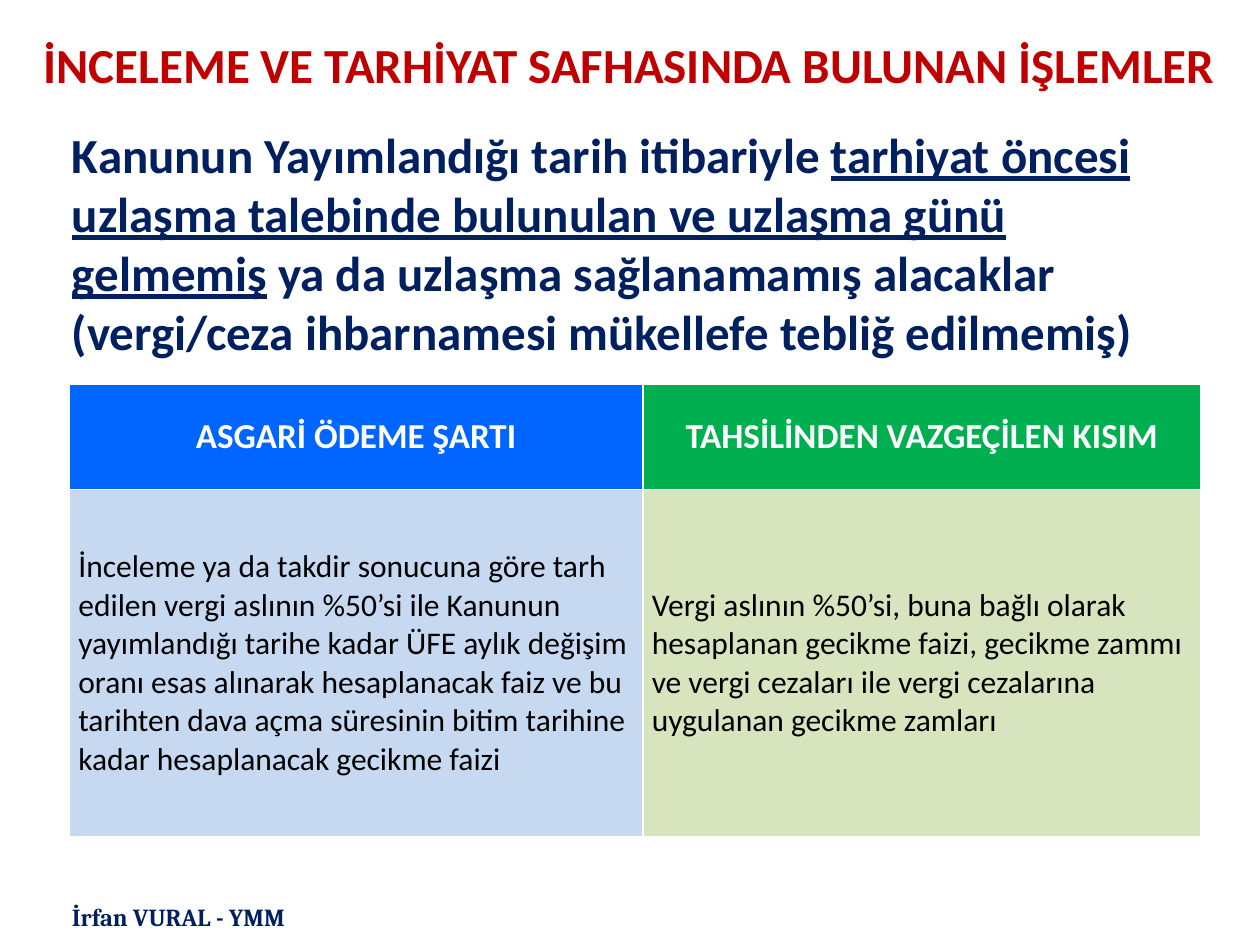
"""Build a slide on tax assessments under review, with a two-column table."""
from lxml import etree
from pptx import Presentation
from pptx.dml.color import RGBColor
from pptx.enum import text as t
from pptx.oxml import ns
from pptx.util import Cm, Pt

NAVY = RGBColor(0x00, 0x20, 0x60)
RED = RGBColor(0xC0, 0x00, 0x00)
WHITE = RGBColor(0xFF, 0xFF, 0xFF)
BLACK = RGBColor(0x00, 0x00, 0x00)
BLUE = RGBColor(0x00, 0x66, 0xFF)
GREEN = RGBColor(0x00, 0xB0, 0x50)
PALE_BLUE = RGBColor(0xC6, 0xD9, 0xF1)
PALE_GREEN = RGBColor(0xD7, 0xE4, 0xBD)

AUTHOR = [("İrfan VURAL - YMM", False)]
TITLE = [("İNCELEME VE TARHİYAT SAFHASINDA BULUNAN İŞLEMLER", False)]
INTRO = [
    ("Kanunun Yayımlandığı tarih itibariyle ", False),
    ("tarhiyat öncesi uzlaşma talebinde bulunulan ve uzlaşma günü gelmemiş", True),
    (" ya da uzlaşma sağlanamamış alacaklar "
     "(vergi/ceza ihbarnamesi mükellefe tebliğ edilmemiş)", False),
]
ROWS = [
    ("ASGARİ ÖDEME ŞARTI", "TAHSİLİNDEN VAZGEÇİLEN KISIM"),
    ("İnceleme ya da takdir sonucuna göre tarh edilen vergi aslının %50’si ile "
     "Kanunun yayımlandığı tarihe kadar ÜFE aylık değişim oranı esas alınarak "
     "hesaplanacak faiz ve bu tarihten dava açma süresinin bitim tarihine kadar "
     "hesaplanacak gecikme faizi",
     "Vergi aslının %50’si, buna bağlı olarak hesaplanan gecikme faizi, gecikme "
     "zammı ve vergi cezaları ile vergi cezalarına uygulanan gecikme zamları"),
]
FILLS = [(BLUE, GREEN), (PALE_BLUE, PALE_GREEN)]
COL_WIDTHS = (11.56, 11.25)
ROW_HEIGHTS = (2.12, 7.0)
TABLE_AT = (1.4, 7.75)

LEFT, CENTER = t.PP_ALIGN.LEFT, t.PP_ALIGN.CENTER
TOP, MIDDLE = t.MSO_ANCHOR.TOP, t.MSO_ANCHOR.MIDDLE


def font(name, size, color, bold=True):
    return {"name": name, "size": Pt(size), "bold": bold, "color": color}


ROW_FONTS = [font("Calibri", 20, WHITE), font("Calibri", 18, BLACK, False)]
ROW_ALIGNS = [CENTER, LEFT]
BOXES = [
    (AUTHOR, (1.2, 18.06, 7.8, 0.86), font("Cambria", 14, NAVY), LEFT, TOP, 0.25),
    (TITLE, (0.58, 0.58, 24.2, 1.4), font("Calibri", 28, RED), CENTER, MIDDLE, 0),
    (INTRO, (1.2, 2.39, 23.2, 5.05), font("Calibri", 28, NAVY), LEFT, TOP, 0.25),
]


def set_attrs(obj, values):
    for name, value in values.items():
        setattr(obj, name, value)


def write(p, runs, style, align):
    p.alignment = align
    for words, underline in runs:
        r = p.add_run()
        r.text = words
        for name, value in style.items():
            if name == "color":
                r.font.color.rgb = value
            else:
                setattr(r.font, name, value)
        if underline:
            r.font.underline = True


def add_borders(cell, color):
    pr = cell._tc.get_or_add_tcPr()
    for i, side in enumerate(("lnL", "lnR", "lnT", "lnB")):
        ln = etree.Element(ns.qn(f"a:{side}"), w=str(Pt(1)))
        fill = etree.SubElement(ln, ns.qn("a:solidFill"))
        etree.SubElement(fill, ns.qn("a:srgbClr"), val=str(color))
        pr.insert(i, ln)


def add_box(s, runs, at, style, align, anchor, inset):
    tf = s.shapes.add_textbox(*map(Cm, at)).text_frame
    set_attrs(tf, {"word_wrap": True, "vertical_anchor": anchor,
                   "margin_left": Cm(inset), "margin_right": Cm(inset)})
    write(tf.paragraphs[0], runs, style, align)


def add_grid(s):
    size = (sum(COL_WIDTHS), sum(ROW_HEIGHTS))
    table = s.shapes.add_table(len(ROWS), len(COL_WIDTHS),
                               *map(Cm, TABLE_AT + size)).table
    for col, width in zip(table.columns, COL_WIDTHS):
        col.width = Cm(width)
    for i, row in enumerate(ROWS):
        table.rows[i].height = Cm(ROW_HEIGHTS[i])
        for j, words in enumerate(row):
            cell = table.cell(i, j)
            set_attrs(cell, {"vertical_anchor": MIDDLE,
                             "margin_left": Cm(0.18), "margin_right": Cm(0.18),
                             "margin_top": 0, "margin_bottom": 0})
            cell.fill.solid()
            cell.fill.fore_color.rgb = FILLS[i][j]
            add_borders(cell, WHITE)
            p = cell.text_frame.paragraphs[0]
            set_attrs(p, {"space_before": Pt(7.2), "space_after": Pt(7.2)})
            write(p, [(words, False)], ROW_FONTS[i], ROW_ALIGNS[i])


def main():
    prs = Presentation()
    set_attrs(prs, {"slide_width": Cm(25.4), "slide_height": Cm(19.05)})
    s = prs.slides.add_slide(prs.slide_layouts[6])
    for box in BOXES:
        add_box(s, *box)
    add_grid(s)
    prs.save("out.pptx")


if __name__ == "__main__":
    main()
